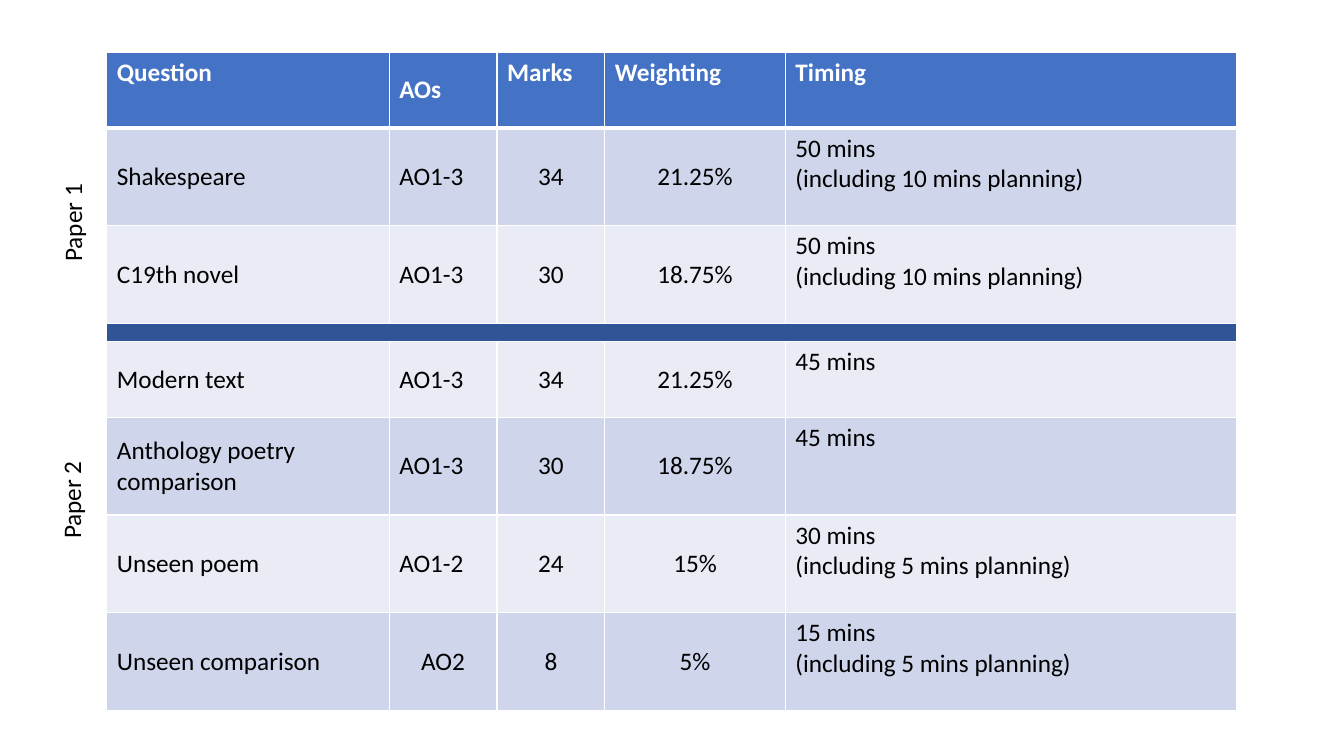
from dataclasses import dataclass

import lxml.etree
import pptx
import pptx.dml.color
import pptx.enum.text
import pptx.oxml.ns
import pptx.util

Inches = pptx.util.Inches
Pt = pptx.util.Pt
RGBColor = pptx.dml.color.RGBColor
Align = pptx.enum.text.PP_ALIGN
Anchor = pptx.enum.text.MSO_ANCHOR
qn = pptx.oxml.ns.qn

WHITE = RGBColor(0xFF, 0xFF, 0xFF)
BLACK = RGBColor(0x00, 0x00, 0x00)
BLUE = RGBColor(0x44, 0x72, 0xC4)
NAVY = RGBColor(0x2F, 0x55, 0x97)
DARK = RGBColor(0xCF, 0xD5, 0xEA)
LIGHT = RGBColor(0xE9, 0xEB, 0xF5)

BODY = {"name": "Calibri", "size": Pt(18), "bold": False}
HEAD = BODY | {"bold": True}
WIDTHS = (2.8, 1.07, 1.07, 1.79, 4.48)
TITLES = ("Question", "AOs", "Marks", "Weighting", "Timing")


@dataclass
class Row:
    height: float
    fill: RGBColor
    texts: tuple[str, ...] = ()


@dataclass
class Label:
    text: str
    left: float
    top: float


def plan(mins: int) -> str:
    return f"(including {mins} mins planning)"


ROWS = (
    Row(0.75, BLUE, TITLES),
    Row(0.97, DARK, ("Shakespeare", "AO1-3", "34", "21.25%", "50 mins\n" + plan(10))),
    Row(0.97, LIGHT, ("C19th novel", "AO1-3", "30", "18.75%", "50 mins\n" + plan(10))),
    Row(0.18, NAVY),
    Row(0.75, LIGHT, ("Modern text", "AO1-3", "34", "21.25%", "45 mins")),
    Row(0.97, DARK, ("Anthology poetry comparison", "AO1-3", "30", "18.75%", "45 mins")),
    Row(0.97, LIGHT, ("Unseen poem", "AO1-2", "24", "15%", "30 mins\n" + plan(5))),
    Row(0.97, DARK, ("Unseen comparison", "AO2", "8", "5%", "15 mins\n" + plan(5))),
)
LABELS = (Label("Paper 1", 0.08, 1.86), Label("Paper 2", 0.07, 4.61))


def style(frame, form: dict, color: RGBColor, align: Align = Align.LEFT) -> None:
    for para in frame.paragraphs:
        para.alignment = align
        for run in para.runs:
            for key, value in form.items():
                setattr(run.font, key, value)
            run.font.color.rgb = color


def border(cell, top: float, base: float) -> None:
    props = cell._tc.get_or_add_tcPr()
    sides = {"a:lnL": 1, "a:lnR": 1, "a:lnT": top, "a:lnB": base}
    for spot, (tag, width) in enumerate(sides.items()):
        line = lxml.etree.Element(qn(tag), w=str(Pt(width)))
        fill = lxml.etree.SubElement(line, qn("a:solidFill"))
        lxml.etree.SubElement(fill, qn("a:srgbClr"), val=str(WHITE))
        props.insert(spot, line)


def shrink(cell) -> None:
    """Let an empty cell fit a thin row."""
    cell.margin_top = cell.margin_bottom = 0
    para = cell.text_frame.paragraphs[0]._p
    lxml.etree.SubElement(para, qn("a:endParaRPr"), sz="800")


def draw_cell(cell, row: Row, col: int) -> None:
    head = row.texts == TITLES
    cell.text = row.texts[col]
    if col == 1 or (col < 4 and not head):
        cell.vertical_anchor = Anchor.MIDDLE
    center = not head and (col in (2, 3) or cell.text == "AO2")
    style(cell.text_frame, HEAD if head else BODY, WHITE if head else BLACK,
          Align.CENTER if center else Align.LEFT)


def draw_table(slide) -> None:
    high = sum(row.height for row in ROWS)
    table = slide.shapes.add_table(
        len(ROWS), len(WIDTHS), Inches(1.06), Inches(0.52),
        Inches(sum(WIDTHS)), Inches(high)).table
    for col, width in enumerate(WIDTHS):
        table.columns[col].width = Inches(width)
    for num, row in enumerate(ROWS):
        table.rows[num].height = Inches(row.height)
        for col in range(len(WIDTHS)):
            cell = table.cell(num, col)
            cell.fill.solid()
            cell.fill.fore_color.rgb = row.fill
            border(cell, 3 if num == 1 else 1, 3 if num == 0 else 1)
            if row.texts:
                draw_cell(cell, row, col)
            else:
                shrink(cell)
        if not row.texts:
            table.cell(num, 0).merge(table.cell(num, len(WIDTHS) - 1))


def draw_label(slide, label: Label) -> None:
    box = slide.shapes.add_textbox(
        Inches(label.left), Inches(label.top), Inches(1.27), Inches(0.4))
    box.rotation = 270
    frame = box.text_frame
    frame.word_wrap = True
    frame.text = label.text
    style(frame, BODY, BLACK)


def main() -> None:
    deck = pptx.Presentation()
    deck.slide_width = Inches(13.33)
    deck.slide_height = Inches(7.5)
    slide = deck.slides.add_slide(deck.slide_layouts[6])
    draw_table(slide)
    for label in LABELS:
        draw_label(slide, label)
    deck.save("out.pptx")


if __name__ == "__main__":
    main()
